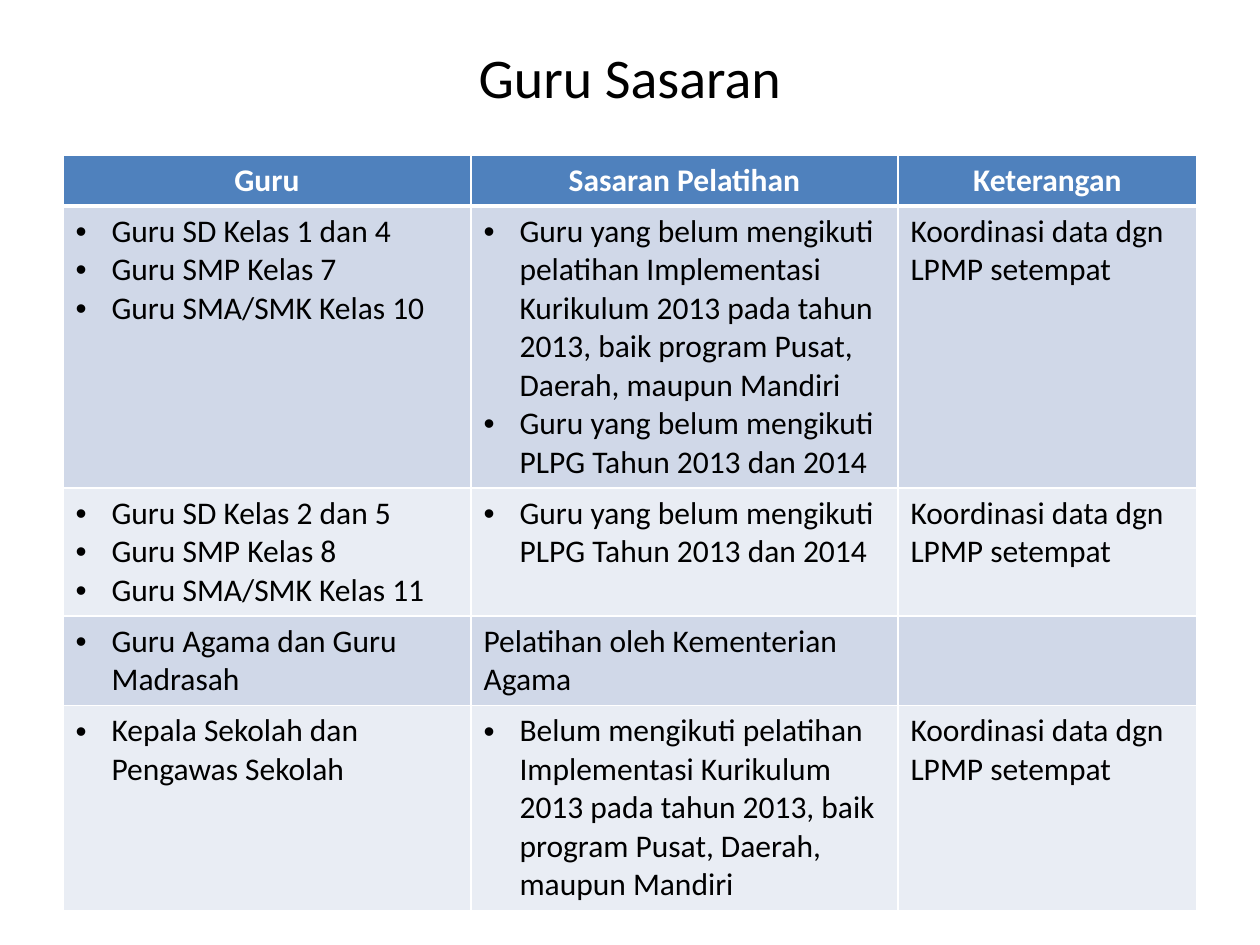
from dataclasses import dataclass

from lxml import etree
from pptx import Presentation
from pptx.dml.color import RGBColor
from pptx.enum.text import MSO_ANCHOR, PP_ALIGN
from pptx.oxml.ns import qn
from pptx.util import Emu, Pt

PX_PER_INCH = 126
FONT = "Calibri"
BLACK, WHITE = "000000", "FFFFFF"
HEADER_FILL = "4F81BD"
BAND_FILLS = ("D0D8E8", "E9EDF4")
CENTER, LEFT = PP_ALIGN.CENTER, PP_ALIGN.LEFT
MIDDLE = MSO_ANCHOR.MIDDLE
TITLE_ONLY = 5
BULLET_INDENT = 36

COLUMN_WIDTHS = (408, 427, 299)
ROW_HEIGHTS = (51, 282, 128, 89, 204)


@dataclass(frozen=True)
class CellText:
    lines: tuple[str, ...] = ()
    bulleted: bool = False


def px(length: int) -> Emu:
    return Emu(round(length * 914400 / PX_PER_INCH))


def color(value: str) -> RGBColor:
    return RGBColor.from_string(value)


def bullets(*lines: str) -> CellText:
    return CellText(lines, bulleted=True)


def plain(*lines: str) -> CellText:
    return CellText(lines)


def add_run(paragraph, text: str, size: int, text_color: str, bold: bool = False) -> None:
    run = paragraph.add_run()
    run.text = text
    run.font.name = FONT
    run.font.size = Pt(size)
    run.font.bold = bold
    run.font.color.rgb = color(text_color)


def add_bullet(paragraph) -> None:
    properties = paragraph._p.get_or_add_pPr()
    properties.set("marL", str(px(BULLET_INDENT)))
    properties.set("indent", str(-px(BULLET_INDENT)))
    etree.SubElement(properties, qn("a:buFont"), typeface="Arial")
    etree.SubElement(properties, qn("a:buChar"), char="•")


def add_borders(cell, bottom: int) -> None:
    properties = cell._tc.get_or_add_tcPr()
    for side, width in (("L", 1), ("R", 1), ("T", 1), ("B", bottom)):
        line = etree.SubElement(properties, qn(f"a:ln{side}"), w=str(Pt(width)))
        fill = etree.SubElement(line, qn("a:solidFill"))
        etree.SubElement(fill, qn("a:srgbClr"), val=WHITE)


def fill_cell(cell, content: CellText, fill: str, header: bool) -> None:
    # Borders come before the fill in the cell properties
    add_borders(cell, bottom=3 if header else 1)
    cell.fill.solid()
    cell.fill.fore_color.rgb = color(fill)
    text_frame = cell.text_frame
    for index, line in enumerate(content.lines):
        paragraph = text_frame.add_paragraph() if index else text_frame.paragraphs[0]
        paragraph.alignment = CENTER if header else LEFT
        if content.bulleted:
            add_bullet(paragraph)
        add_run(paragraph, line, 18, WHITE if header else BLACK, header)


COORDINATION = plain("Koordinasi data dgn LPMP setempat")
NO_PLPG = "Guru yang belum mengikuti PLPG Tahun 2013 dan 2014"
NO_TRAINING = (
    "elum mengikuti pelatihan Implementasi Kurikulum 2013 pada tahun 2013, "
    "baik program Pusat, Daerah, maupun Mandiri"
)

ROWS = (
    (plain("Guru"), plain("Sasaran Pelatihan"), plain("Keterangan")),
    (
        bullets("Guru SD Kelas 1 dan 4", "Guru SMP Kelas 7", "Guru SMA/SMK Kelas 10"),
        bullets(f"Guru yang b{NO_TRAINING}", NO_PLPG),
        COORDINATION,
    ),
    (
        bullets("Guru SD Kelas 2 dan 5", "Guru SMP Kelas 8", "Guru SMA/SMK Kelas 11"),
        bullets(NO_PLPG),
        COORDINATION,
    ),
    (
        bullets("Guru Agama dan Guru Madrasah"),
        plain("Pelatihan oleh Kementerian Agama"),
        plain(),
    ),
    (
        bullets("Kepala Sekolah dan Pengawas Sekolah"),
        bullets(f"B{NO_TRAINING}"),
        COORDINATION,
    ),
)


def add_title(slide, text: str) -> None:
    title = slide.shapes.title
    title.left, title.top, title.width, title.height = px(63), px(38), px(1134), px(77)
    title.text_frame.vertical_anchor = MIDDLE
    paragraph = title.text_frame.paragraphs[0]
    paragraph.alignment = CENTER
    add_run(paragraph, text, 32, BLACK)


def add_target_table(slide) -> None:
    table = slide.shapes.add_table(
        len(ROWS), len(COLUMN_WIDTHS),
        px(63), px(155), px(sum(COLUMN_WIDTHS)), px(sum(ROW_HEIGHTS)),
    ).table
    for column, width in zip(table.columns, COLUMN_WIDTHS):
        column.width = px(width)
    for row, height in zip(table.rows, ROW_HEIGHTS):
        row.height = px(height)
    for row_index, contents in enumerate(ROWS):
        header = row_index == 0
        fill = HEADER_FILL if header else BAND_FILLS[(row_index - 1) % 2]
        for column_index, content in enumerate(contents):
            fill_cell(table.cell(row_index, column_index), content, fill, header)


def main() -> None:
    presentation = Presentation()
    presentation.slide_width, presentation.slide_height = px(1260), px(945)
    slide = presentation.slides.add_slide(presentation.slide_layouts[TITLE_ONLY])
    add_title(slide, "Guru Sasaran")
    add_target_table(slide)
    presentation.save("out.pptx")


if __name__ == "__main__":
    main()
